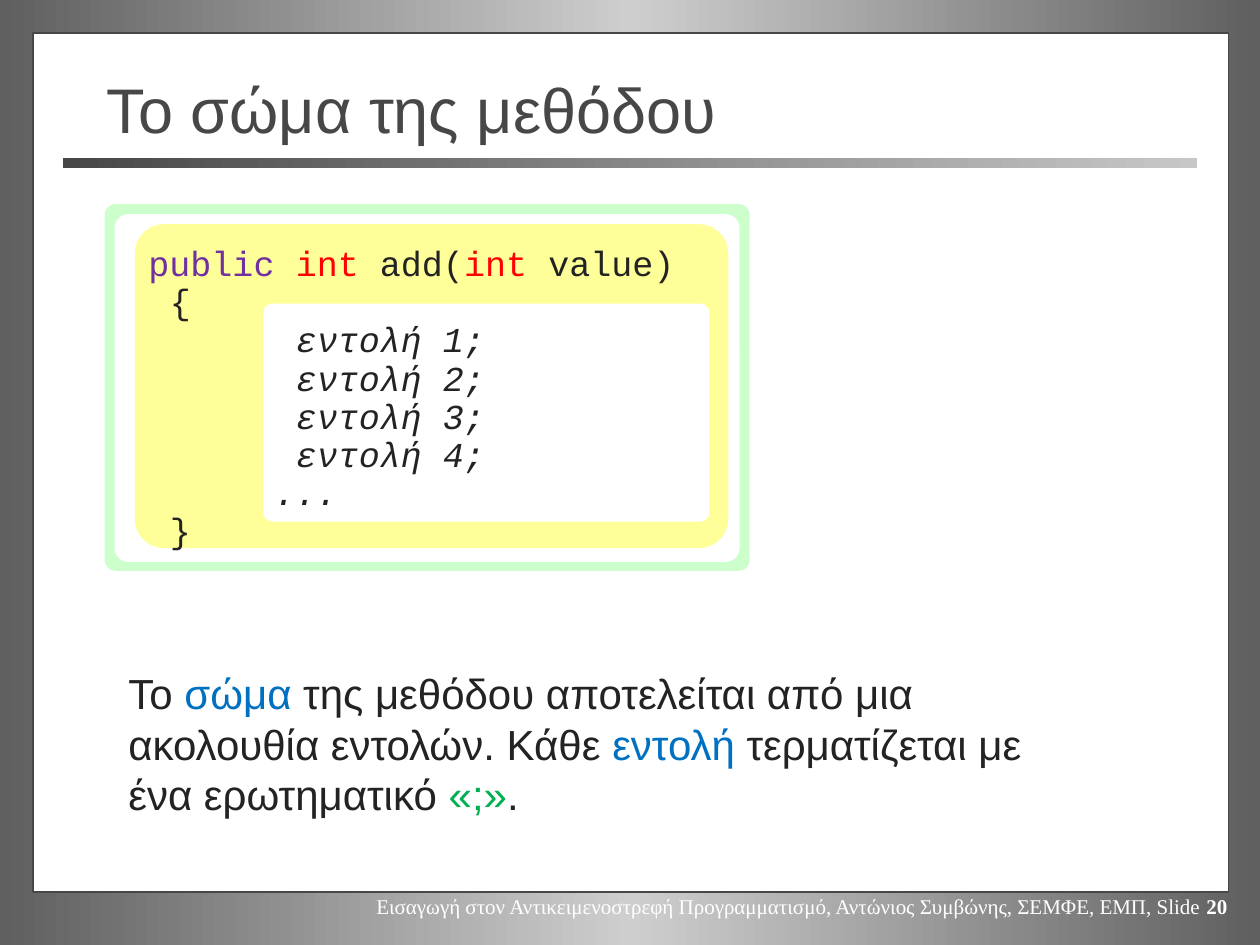
from lxml.etree import SubElement
from pptx import Presentation
from pptx.dml.color import RGBColor
from pptx.enum.shapes import MSO_SHAPE
from pptx.enum.text import MSO_ANCHOR, PP_ALIGN
from pptx.oxml.ns import qn
from pptx.util import Inches, Pt

THEME = {
    "sans": "Arial", "mono": "Courier New", "serif": "Times New Roman",
    "title": 36, "body": 24, "code": 20, "footer": 12,
    "ink": "232323", "dark": "474747", "white": "FFFFFF",
    "blue": "0070C0", "green": "00B050", "purple": "7030A0", "red": "FF0000",
    "mint": "CCFFCC", "yellow": "FFFF99",
    "backdrop": [(0, "5F5F5F"), (50, "CECECE"), (100, "5F5F5F")],
    "rule": [(0, "474747"), (100, "C7C7C7")],
}

# Content: a paragraph is a list of (text, colour) runs
TITLE = "Το σώμα της μεθόδου"
SIGNATURE = [("public ", "purple"), ("int", "red"), (" add(", "ink"),
             ("int", "red"), (" value)", "ink")]
STATEMENTS = [f"εντολή {n};" for n in range(1, 5)]
EXPLANATION = [
    ("Το ", "ink"), ("σώμα ", "blue"),
    ("της μεθόδου αποτελείται από μια ακολουθία εντολών. Κάθε ", "ink"),
    ("εντολή", "blue"), (" τερματίζεται με ένα ερωτηματικό ", "ink"),
    ("«;»", "green"), (".", "ink")]
FOOTER = ("Εισαγωγή στον Αντικειμενοστρεφή Προγραμματισμό, "
          "Αντώνιος Συμβώνης, ΣΕΜΦΕ, ΕΜΠ, Slide ")
PAGE = "20"

# Nested code panels: left, top, width, height, corner, colour
PANELS = [
    (0.83, 1.62, 5.12, 2.91, 0.03, "mint"),
    (0.91, 1.7, 4.96, 2.76, 0.04, "white"),
    (1.07, 1.78, 4.71, 2.57, 0.09, "yellow"),
    (2.09, 2.41, 3.54, 1.73, 0.04, "white"),
]
CHAR = 0.17  # width of one code character
TAB = 1.0


def rgb(name):
    return RGBColor.from_string(THEME[name])


def set_gradient(fill, element, stops):
    fill.gradient()
    fill.gradient_angle = 0
    gs_list = element.find(".//" + qn("a:gsLst"))
    for gs in list(gs_list):
        gs_list.remove(gs)
    for pos, color in stops:
        gs = SubElement(gs_list, qn("a:gs"), pos=str(pos * 1000))
        SubElement(gs, qn("a:srgbClr"), val=color)


def add_block(s, kind, box, color=None, line=None):
    sp = s.shapes.add_shape(kind, *map(Inches, box))
    sp.shadow.inherit = False
    if color:
        sp.fill.solid()
        sp.fill.fore_color.rgb = rgb(color)
    if line:
        sp.line.color.rgb = rgb(line)
        sp.line.width = Pt(1)
    else:
        sp.line.fill.background()
    return sp


def add_run(p, text, *, font, size, color="ink", bold=False, italic=False):
    r = p.add_run()
    r.text = text
    r.font.name, r.font.size = THEME[font], Pt(THEME[size])
    r.font.color.rgb = rgb(color)
    r.font.bold, r.font.italic = bold, italic


def add_text(s, box, *, wrap=True, anchor=MSO_ANCHOR.TOP):
    tf = s.shapes.add_textbox(*map(Inches, box)).text_frame
    tf.word_wrap, tf.vertical_anchor = wrap, anchor
    return tf


def add_code(tf, lines):
    for i, (indent, runs, italic) in enumerate(lines):
        p = tf.add_paragraph() if i else tf.paragraphs[0]
        p.line_spacing = 0.7
        p.space_before = Pt(5 if i else 0)
        pPr = p._p.get_or_add_pPr()
        pPr.set("marL", str(Inches(indent)))
        pPr.set("indent", "0")
        for text, color in runs:
            add_run(p, text, font="mono", size="code", color=color, italic=italic)


def main():
    prs = Presentation()
    prs.slide_width, prs.slide_height = Inches(10), Inches(7.5)
    s = prs.slides.add_slide(prs.slide_layouts[6])

    # Backdrop, page and footer
    set_gradient(s.background.fill, s.element, THEME["backdrop"])
    add_block(s, MSO_SHAPE.RECTANGLE, (0.26, 0.26, 9.49, 6.82), "white", "dark")
    p = add_text(s, (2.84, 7.04, 7, 0.3), wrap=False).paragraphs[0]
    p.alignment = PP_ALIGN.RIGHT
    for text, bold in ((FOOTER, False), (PAGE, True)):
        add_run(p, text, font="serif", size="footer", color="white", bold=bold)

    # Title and rule
    rule = add_block(s, MSO_SHAPE.RECTANGLE, (0.5, 1.25, 9, 0.08))
    set_gradient(rule.fill, rule.element, THEME["rule"])
    tf = add_text(s, (0.75, 0.55, 8.5, 0.62), anchor=MSO_ANCHOR.MIDDLE)
    add_run(tf.paragraphs[0], TITLE, font="sans", size="title", color="dark")

    # Code on its panels
    for *box, corner, color in PANELS:
        panel = add_block(s, MSO_SHAPE.ROUNDED_RECTANGLE, box, color)
        panel.adjustments[0] = corner
    lines = [(0, SIGNATURE, False), (CHAR, [("{", "ink")], False)]
    lines += [(TAB + CHAR, [(text, "ink")], True) for text in STATEMENTS]
    lines += [(TAB, [("...", "ink")], True), (CHAR, [("}", "ink")], False)]
    add_code(add_text(s, (1.08, 1.96, 5, 2.4)), lines)

    # Explanation
    p = add_text(s, (0.92, 5.25, 7.85, 1.31)).paragraphs[0]
    for text, color in EXPLANATION:
        add_run(p, text, font="sans", size="body", color=color)

    prs.save("out.pptx")


if __name__ == "__main__":
    main()
